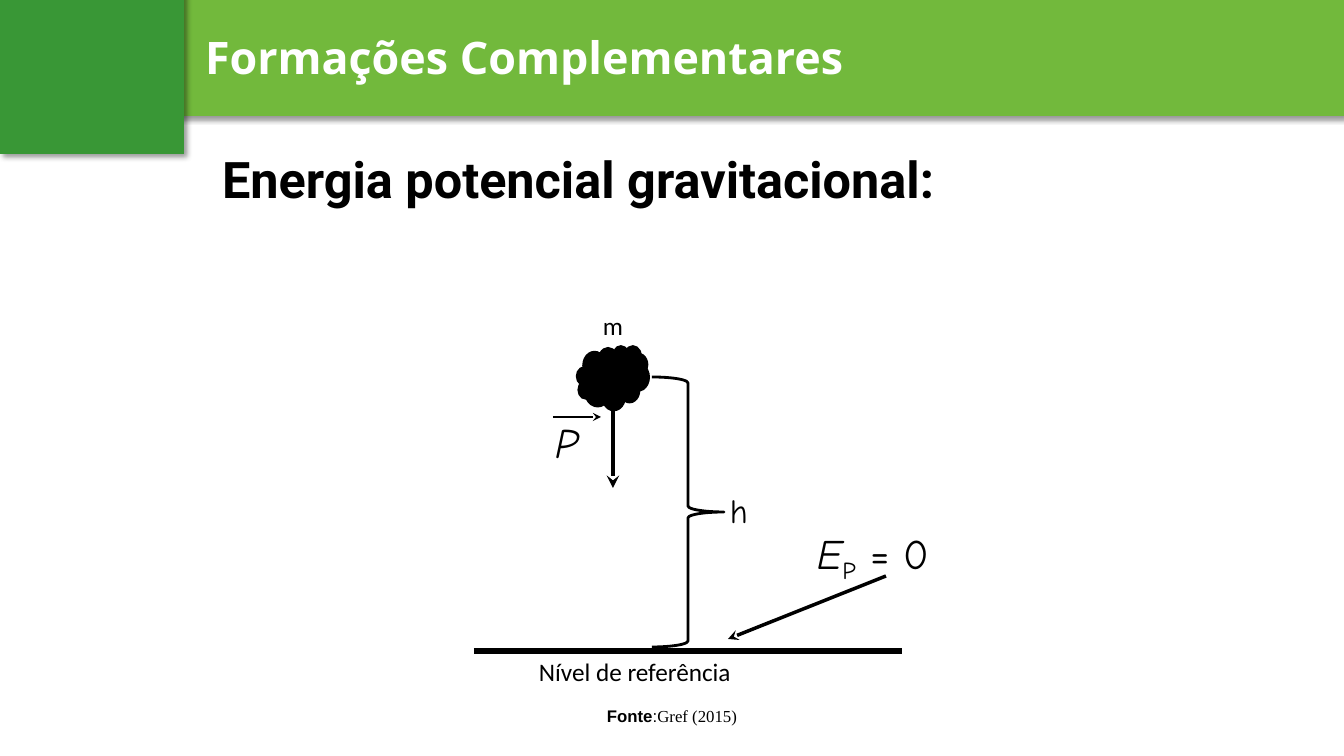
from lxml.etree import SubElement
from pptx import Presentation
from pptx.dml.color import RGBColor
from pptx.enum.shapes import MSO_CONNECTOR, MSO_SHAPE
from pptx.enum.text import MSO_ANCHOR, PP_ALIGN
from pptx.oxml import parse_xml
from pptx.oxml.ns import nsdecls, qn
from pptx.util import Pt

EMU_PER_PX = 12192000 / 1344
BLACK, WHITE = "000000", "FFFFFF"
BAND_GREEN, CORNER_GREEN = "72B93C", "399736"


def px(length):
    return round(length * EMU_PER_PX)


def box(*lengths):
    return [px(length) for length in lengths]


def color(hex_string):
    return RGBColor.from_string(hex_string)


def shadow_effect():
    """Soft shadow falling to the lower right."""
    return parse_xml(
        f'<a:effectLst {nsdecls("a")}>'
        f'<a:outerShdw blurRad="{Pt(4)}" dist="{Pt(3)}" dir="2700000" algn="tl" rotWithShape="0">'
        '<a:srgbClr val="000000"><a:alpha val="40000"/></a:srgbClr>'
        '</a:outerShdw></a:effectLst>')


def write_runs(paragraph, *runs):
    """Each run is its text and a dict of font values."""
    for text, values in runs:
        run = paragraph.add_run()
        run.text = text
        values = {"color": BLACK, **values}
        run.font.color.rgb = color(values.pop("color"))
        if values.pop("subscript", False):
            run.font._element.set("baseline", "-25000")
        if values.pop("shadow", False):
            run.font._element.find(qn("a:solidFill")).addnext(shadow_effect())
        for name, value in values.items():
            setattr(run.font, name, value)


def add_label(slide, place, *runs, align=PP_ALIGN.LEFT, margin_y=5):
    frame = slide.shapes.add_textbox(*box(*place)).text_frame
    frame_format = {"word_wrap": True, "margin_left": px(10), "margin_right": px(10),
                    "margin_top": px(margin_y), "margin_bottom": px(margin_y)}
    for name, value in frame_format.items():
        setattr(frame, name, value)
    frame.paragraphs[0].alignment = align
    write_runs(frame.paragraphs[0], *runs)


def add_figure(slide, kind, place, fill=None, line_width=None, shadow=False):
    shape = slide.shapes.add_shape(kind, *box(*place))
    shape.shadow.inherit = False
    if shadow:
        properties = shape._element.spPr
        properties.replace(properties.find(qn("a:effectLst")), shadow_effect())
    if fill:
        shape.fill.solid()
        shape.fill.fore_color.rgb = color(fill)
    else:
        shape.fill.background()
    if line_width:
        shape.line.color.rgb = color(BLACK)
        shape.line.width = Pt(line_width)
    else:
        shape.line.fill.background()
    return shape


def add_line(slide, ends, width, arrow=True):
    connector = slide.shapes.add_connector(MSO_CONNECTOR.STRAIGHT, *box(*ends))
    connector.line.color.rgb = color(BLACK)
    connector.line.width = Pt(width)
    if arrow:
        SubElement(connector.line._get_or_add_ln(), qn("a:tailEnd"), type="stealth")
    SubElement(connector._element.spPr, qn("a:effectLst"))


def add_header(slide):
    add_figure(slide, MSO_SHAPE.RECTANGLE, (142, 0, 1202, 116), BAND_GREEN, shadow=True)
    add_label(slide, (195, 25, 1091, 65),
              ("Formações Complementares",
               {"size": Pt(32), "name": "Open Sans", "bold": True, "color": WHITE, "shadow": True}))
    add_figure(slide, MSO_SHAPE.RECTANGLE, (0, -8, 184, 162), CORNER_GREEN, shadow=True)


def fill_title(slide):
    title = slide.shapes.title
    for name, length in zip(("left", "top", "width", "height"), (212, 143, 1159, 146)):
        setattr(title, name, px(length))
    title.text_frame.vertical_anchor = MSO_ANCHOR.TOP
    paragraph = title.text_frame.paragraphs[0]
    paragraph.alignment = PP_ALIGN.LEFT
    write_runs(paragraph, ("Energia potencial gravitacional:",
                           {"size": Pt(36), "name": "Roboto", "bold": True}))


def add_diagram(slide):
    # Body, reference level and height
    add_line(slide, (474, 651, 902, 651), 4, arrow=False)
    add_figure(slide, MSO_SHAPE.CLOUD, (577, 346, 72, 64), BLACK, 1.5)
    brace = add_figure(slide, MSO_SHAPE.RIGHT_BRACE, (652, 377, 72, 270), line_width=2)
    brace.adjustments[0] = 0.083

    # Weight, its vector mark and the pointer to the reference level
    add_line(slide, (613, 409, 613, 488), 3)
    add_line(slide, (553, 417, 601, 417), 1)
    add_line(slide, (886, 576, 728, 639), 2.5)

    # Symbols and captions
    symbol = {"size": Pt(30), "name": "Comic Neue"}
    italic = {**symbol, "italic": True}
    caption = {"size": Pt(18), "name": "Calibri"}
    add_label(slide, (807, 522, 151, 61),
              ("E", italic), ("P", {**symbol, "subscript": True}), (" = 0", symbol))
    add_label(slide, (720, 485, 72, 50), ("h", {**symbol, "size": Pt(24)}))
    add_label(slide, (545, 411, 151, 61), ("P", italic))
    add_label(slide, (593, 305, 40, 40), ("m", caption))
    add_label(slide, (529, 651, 322, 40), ("Nível de referência", caption))


def add_source(slide):
    small = {"size": Pt(12), "name": "Arial"}
    add_label(slide, (448, 696, 448, 40),
              ("Fonte", {**small, "bold": True}), (":", small),
              ("Gref (2015)", {**small, "name": "Times New Roman"}),
              align=PP_ALIGN.CENTER, margin_y=10)


def main():
    presentation = Presentation()
    presentation.slide_width, presentation.slide_height = box(1344, 756)
    slide = presentation.slides.add_slide(presentation.slide_layouts[5])
    add_header(slide)
    fill_title(slide)
    add_diagram(slide)
    add_source(slide)
    presentation.save("out.pptx")


if __name__ == "__main__":
    main()
